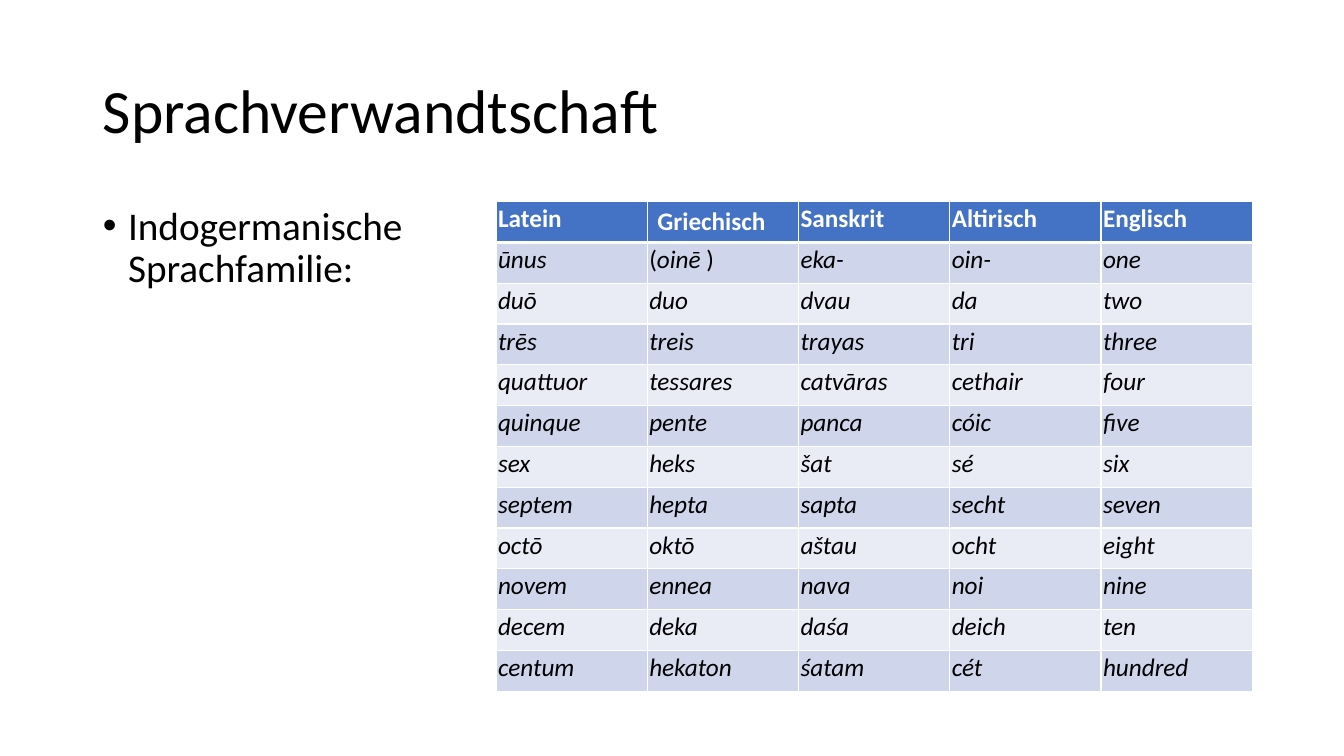
"""Build a slide with a table of Indo-European number words."""
import pptx
import pptx.util
import pptx.dml.color
import pptx.enum.text
import pptx.oxml
import pptx.oxml.ns

Inches, Pt = pptx.util.Inches, pptx.util.Pt
RGBColor = pptx.dml.color.RGBColor

TITLE = "Sprachverwandtschaft"
BODY = "Indogermanische\vSprachfamilie:"
HEADS = ("Latein", "Griechisch", "Sanskrit", "Altirisch", "Englisch")
WORDS = [
    ("ūnus", ("(", "oinē ", ")"), "eka-", "oin-", "one"),
    ("duō", "duo", "dvau", "da", "two"),
    ("trēs", "treis", "trayas", "tri", "three"),
    ("quattuor", "tessares", "catvāras", "cethair", "four"),
    ("quinque", "pente", "panca", "cóic", "five"),
    ("sex", "heks", "šat", "sé", "six"),
    ("septem", "hepta", "sapta", "secht", "seven"),
    ("octō", "oktō", "aštau", "ocht", "eight"),
    ("novem", "ennea", "nava", "noi", "nine"),
    ("decem", "deka", "daśa", "deich", "ten"),
    ("centum", "hekaton", "śatam", "cét", "hundred"),
]

FONT = "Calibri"
BLACK = RGBColor(0x00, 0x00, 0x00)
WHITE = RGBColor(0xFF, 0xFF, 0xFF)
BLUE = RGBColor(0x44, 0x72, 0xC4)
BANDS = (RGBColor(0xE9, 0xEB, 0xF5), RGBColor(0xCF, 0xD5, 0xEA))
LEFT, TOP, WIDTH, HEIGHT = 4.92, 2, 7.5, 4.86
INSET = 0.02


def style(font, size, color):
    font.name = FONT
    font.size = Pt(size)
    font.color.rgb = color


def place(shape, box):
    shape.left, shape.top, shape.width, shape.height = map(Inches, box)


def fill_holder(shape, box, text, size, anchor):
    place(shape, box)
    frame = shape.text_frame
    frame.text = text
    frame.word_wrap = True
    frame.auto_size = pptx.enum.text.MSO_AUTO_SIZE.NONE
    frame.vertical_anchor = anchor
    para = frame.paragraphs[0]
    para.alignment = pptx.enum.text.PP_ALIGN.LEFT
    para.line_spacing = 0.9
    style(para.font, size, BLACK)
    return para


def add_borders(cell, row):
    props = cell._tc.get_or_add_tcPr()
    widths = {"L": 1, "R": 1, "T": 3 if row == 1 else 1, "B": 3 if row == 0 else 1}
    for side, width in widths.items():
        props.append(pptx.oxml.parse_xml(
            f'<a:ln{side} {pptx.oxml.ns.nsdecls("a")} w="{Pt(width)}">'
            f'<a:solidFill><a:srgbClr val="{WHITE}"/></a:solidFill></a:ln{side}>'))


def fill_cell(cell, row, word):
    head = row == 0
    add_borders(cell, row)
    cell.fill.solid()
    cell.fill.fore_color.rgb = BLUE if head else BANDS[row % 2]
    if word != "Griechisch":
        cell.margin_left = cell.margin_right = Inches(INSET)
        cell.margin_top = cell.margin_bottom = Inches(INSET)
    para = cell.text_frame.paragraphs[0]
    style(para.font, 18, WHITE if head else BLACK)
    para.font.bold = head
    for part in (word,) if isinstance(word, str) else word:
        run = para.add_run()
        run.text = part
        style(run.font, 18, WHITE if head else BLACK)
        run.font.bold = head
        run.font.italic = not head and part not in "()"


def main():
    deck = pptx.Presentation()
    deck.slide_width, deck.slide_height = Inches(13.33), Inches(7.5)
    slide = deck.slides.add_slide(deck.slide_layouts[1])
    title, body = slide.placeholders
    anchors = pptx.enum.text.MSO_ANCHOR
    fill_holder(title, (0.92, 0.4, 11.5, 1.45), TITLE, 44, anchors.MIDDLE)
    para = fill_holder(body, (0.92, 2, 11.5, 4.76), BODY, 28, anchors.TOP)
    para.space_before = Pt(10)
    props = para._p.get_or_add_pPr()
    props.set("marL", str(Inches(0.25)))
    props.set("indent", str(Inches(-0.25)))

    rows = [HEADS] + WORDS
    table = slide.shapes.add_table(
        len(rows), len(HEADS), Inches(LEFT), Inches(TOP),
        Inches(WIDTH), Inches(HEIGHT)).table
    for row, words in enumerate(rows):
        table.rows[row].height = Inches(HEIGHT / len(rows))
        for col, word in enumerate(words):
            fill_cell(table.cell(row, col), row, word)
    deck.save("out.pptx")


if __name__ == "__main__":
    main()
